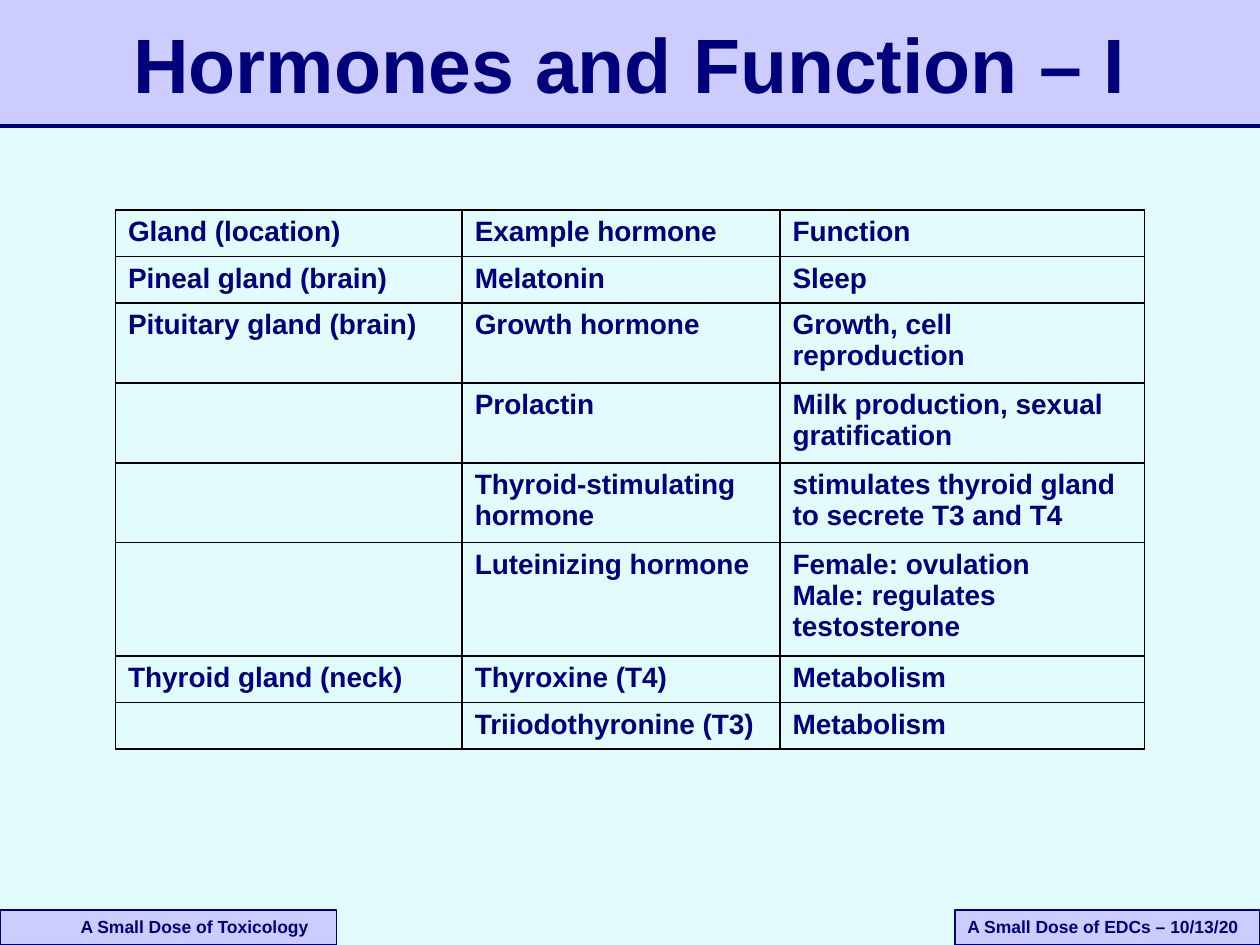
import pptx
import pptx.util
import pptx.dml.color
import pptx.enum.shapes
import pptx.enum.text
import pptx.oxml
import pptx.oxml.ns

SLIDE_W = pptx.util.Inches(10)
SLIDE_H = pptx.util.Inches(7.5)
FONT = "Arial"
COLORS = {"background": "E2FCFE", "band": "CCCCFF", "navy": "00007D", "grid": "000000"}

COLUMN_WIDTHS = [2.75, 2.52, 2.89]
ROW_HEIGHTS = {1: 0.37, 2: 0.63, 3: 0.9}  # inches, by number of text lines
# Text lines in the row, then gland, hormone and function
HORMONES = [
    (1, "Gland (location)", "Example hormone", "Function"),
    (1, "Pineal gland (brain)", "Melatonin", "Sleep"),
    (2, "Pituitary gland (brain)", "Growth hormone", "Growth, cell reproduction"),
    (2, "", "Prolactin", "Milk production, sexual gratification"),
    (2, "", "Thyroid-stimulating hormone", "stimulates thyroid gland to secrete T3 and T4"),
    (3, "", "Luteinizing hormone", "Female: ovulation\nMale: regulates testosterone"),
    (1, "Thyroid gland (neck)", "Thyroxine (T4)", "Metabolism"),
    (1, "", "Triiodothyronine (T3)", "Metabolism"),
]


def rgb(name):
    return pptx.dml.color.RGBColor.from_string(COLORS[name])


def region(left, top, width, height):
    """Turn shares of the slide into a box."""
    return (int(left * SLIDE_W), int(top * SLIDE_H), int(width * SLIDE_W), int(height * SLIDE_H))


def write(frame, text, size, align=pptx.enum.text.PP_ALIGN.LEFT):
    frame.word_wrap = True
    for index, line in enumerate(text.split("\n")):
        paragraph = frame.add_paragraph() if index else frame.paragraphs[0]
        paragraph.alignment = align
        paragraph.font.size = pptx.util.Pt(size)
        if not line:
            continue
        run = paragraph.add_run()
        run.text = line
        run.font.name = FONT
        run.font.size = pptx.util.Pt(size)
        run.font.bold = True
        run.font.color.rgb = rgb("navy")


def add_panel(slide, box):
    panel = slide.shapes.add_shape(pptx.enum.shapes.MSO_SHAPE.RECTANGLE, *box)
    panel.shadow.inherit = False
    panel.fill.solid()
    panel.fill.fore_color.rgb = rgb("band")
    return panel


def add_header(slide, box, title):
    left, top, width, height = box
    # Band
    add_panel(slide, box).line.fill.background()
    # Rule under the band
    rule = slide.shapes.add_connector(
        pptx.enum.shapes.MSO_CONNECTOR.STRAIGHT, left, top + height, left + width, top + height)
    rule.line.color.rgb = rgb("navy")
    rule.line.width = pptx.util.Pt(2)
    rule._element.spPr.append(
        pptx.oxml.parse_xml(f'<a:effectLst {pptx.oxml.ns.nsdecls("a")}/>'))
    # Title
    margin_x, margin_y = width // 60, height // 12
    heading = slide.shapes.add_textbox(
        left + margin_x, top + margin_y, width - 2 * margin_x, height - 2 * margin_y)
    heading.text_frame.vertical_anchor = pptx.enum.text.MSO_ANCHOR.MIDDLE
    write(heading.text_frame, title, 44, pptx.enum.text.PP_ALIGN.CENTER)


def add_footer_tag(slide, box, text, indent=0):
    tag = add_panel(slide, box)
    tag.line.color.rgb = rgb("navy")
    tag.line.width = pptx.util.Pt(0.75)
    frame = tag.text_frame
    frame.vertical_anchor = pptx.enum.text.MSO_ANCHOR.TOP
    frame.margin_left = pptx.util.Inches(0.1 + indent)
    write(frame, text, 10)


def add_borders(cell):
    properties = cell._tc.get_or_add_tcPr()
    for index, side in enumerate(("lnL", "lnR", "lnT", "lnB")):
        properties.insert(index, pptx.oxml.parse_xml(
            f'<a:{side} {pptx.oxml.ns.nsdecls("a")} w="{pptx.util.Pt(1)}"><a:solidFill>'
            f'<a:srgbClr val="{COLORS["grid"]}"/></a:solidFill></a:{side}>'))


def add_hormone_table(slide, box):
    table = slide.shapes.add_table(len(HORMONES), len(COLUMN_WIDTHS), *box).table
    table.first_row = False
    table.horz_banding = False
    for column, share in zip(table.columns, COLUMN_WIDTHS):
        column.width = int(box[2] * share / sum(COLUMN_WIDTHS))
    for row, (lines, *texts) in zip(table.rows, HORMONES):
        row.height = pptx.util.Inches(ROW_HEIGHTS[lines])
        for cell, text in zip(row.cells, texts):
            cell.fill.background()
            add_borders(cell)
            write(cell.text_frame, text, 16)


def main():
    deck = pptx.Presentation()
    deck.slide_width, deck.slide_height = SLIDE_W, SLIDE_H
    slide = deck.slides.add_slide(deck.slide_layouts[6])
    slide.background.fill.solid()
    slide.background.fill.fore_color.rgb = rgb("background")

    add_header(slide, region(0, 0, 1, 2 / 15), "Hormones and Function – I")
    add_footer_tag(slide, region(0, 0.963, 0.267, 0.037), "A Small Dose of Toxicology", indent=0.54)
    add_footer_tag(slide, region(0.758, 0.963, 0.242, 0.037), "A Small Dose of EDCs – 10/13/20")
    add_hormone_table(slide, region(11 / 120, 2 / 9, 49 / 60, 0.57))

    deck.save("out.pptx")


if __name__ == "__main__":
    main()
